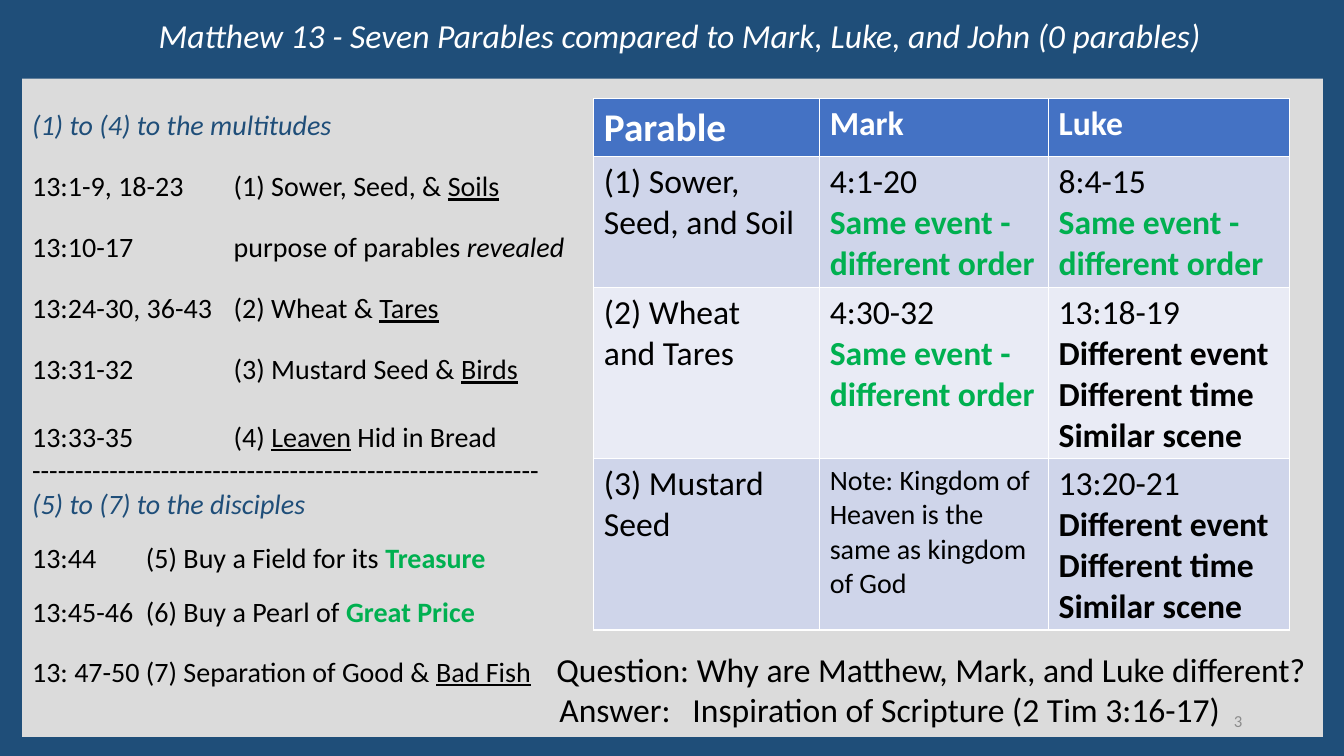
"""Build a slide that compares the parables of Matthew 13 with Mark and Luke."""
from lxml.etree import SubElement
from pptx import Presentation
from pptx.dml.color import RGBColor
from pptx.enum.shapes import MSO_SHAPE
from pptx.enum.text import MSO_ANCHOR, MSO_AUTO_SIZE, PP_ALIGN
from pptx.oxml.ns import qn
from pptx.util import Inches, Pt


class Theme:
    """Colours, type sizes and font of the slide."""

    font = "Calibri"
    navy, panel, head = "1F4E79", "DBDBDB", "4472C4"
    bands = ["CFD5EA", "E9EBF5"]
    white, black, green, grey = "FFFFFF", "000000", "00B050", "8C8C8C"
    tiny, body, large, first = 12, 20, 24, 28


def style(font, size, color, bold=False, italic=False):
    """Set every property of a font."""
    font.name, font.size = Theme.font, Pt(size)
    font.bold, font.italic = bold, italic
    font.color.rgb = RGBColor.from_string(color)


def paint(fill, color):
    """Give a fill one solid colour."""
    fill.solid()
    fill.fore_color.rgb = RGBColor.from_string(color)


deck = Presentation()
deck.slide_width, deck.slide_height = Inches(13.33), Inches(7.5)
slide = deck.slides.add_slide(deck.slide_layouts[5])
paint(slide.background.fill, Theme.navy)

title = slide.shapes.title
title.left, title.top = Inches(0.19), Inches(0.1)
title.width, title.height = Inches(13.1), Inches(0.5)
frame = title.text_frame
frame.auto_size = MSO_AUTO_SIZE.NONE
frame.vertical_anchor = MSO_ANCHOR.TOP
frame.text = "Matthew 13 - Seven Parables compared to Mark, Luke, and John (0 parables)"
frame.paragraphs[0].alignment = PP_ALIGN.CENTER
style(frame.paragraphs[0].font, Theme.large, Theme.white, italic=True)

panel = slide.shapes.add_shape(
    MSO_SHAPE.RECTANGLE, Inches(0.22), Inches(0.78), Inches(12.9), Inches(6.53))
panel.shadow.inherit = False
paint(panel.fill, Theme.panel)
panel.line.fill.background()
frame = panel.text_frame
frame.word_wrap = True
frame.vertical_anchor = MSO_ANCHOR.TOP
frame.margin_top = Inches(0.29)

wide, near, final = [2.0], [1.13], [1.13, 5.2]
verses = [
    (0, wide, [("(1) to (4) to the multitudes", "title")]),
    (19.5, wide, [("13:1-9, 18-23\t(1) Sower, Seed, & ", ""), ("Soils", "under")]),
    (19.5, wide, [("13:10-17\tpurpose of parables ", ""), ("revealed", "italic")]),
    (19.5, wide, [("13:24-30, 36-43\t(2) Wheat & ", ""), ("Tares", "under")]),
    (19.5, wide, [("13:31-32\t(3) Mustard Seed & ", ""), ("Birds", "under")]),
    (24.4, wide, [("13:33-35\t(4) ", ""), ("Leaven", "under"), (" Hid in Bread", "")]),
    (0, wide, [("-" * 59, "")]),
    (0, wide, [("(5) to (7) to the disciples", "title")]),
    (14.6, near, [("13:44\t(5) Buy a Field for its ", ""), ("Treasure", "green")]),
    (14.6, near, [("13:45-46\t(6) Buy a Pearl of ", ""), ("Great Price", "green")]),
    (14.6, final, [("13: 47-50\t(7) Separation of Good & ", ""), ("Bad Fish", "under"),
                   ("\tQuestion: Why are Matthew, Mark, and Luke different?", "large")]),
    (0, [5.23, 6.55], [("\tAnswer:\tInspiration of Scripture (2 Tim 3:16-17)", "large")]),
]
for row, (gap, stops, parts) in enumerate(verses):
    para = frame.paragraphs[0] if row == 0 else frame.add_paragraph()
    para.alignment = PP_ALIGN.LEFT
    para.space_before = Pt(gap)
    tabs = SubElement(para._p.get_or_add_pPr(), qn("a:tabLst"))
    for stop in stops:
        SubElement(tabs, qn("a:tab"), pos=str(Inches(stop)), algn="l")
    for text, look in parts:
        run = para.add_run()
        run.text = text
        color = {"title": Theme.navy, "green": Theme.green}.get(look, Theme.black)
        size = Theme.large if look == "large" else Theme.body
        style(run.font, size, color, look == "green", look in ("title", "italic"))
        run.font.underline = look == "under"

number = slide.shapes.add_textbox(Inches(9.42), Inches(6.95), Inches(3), Inches(0.4))
frame = number.text_frame
frame.word_wrap = True
frame.vertical_anchor = MSO_ANCHOR.MIDDLE
frame.text = "3"
frame.paragraphs[0].alignment = PP_ALIGN.RIGHT
style(frame.paragraphs[0].font, Theme.tiny, Theme.grey)

same = "Same event - different order"
other = "Different event\nDifferent time\nSimilar scene"
cells = [
    ["Parable", "Mark", "Luke"],
    ["(1) Sower, Seed, and Soil", f"4:1-20\n{same}", f"8:4-15\n{same}"],
    ["(2) Wheat\nand Tares", f"4:30-32\n{same}", f"13:18-19\n{other}"],
    ["(3) Mustard Seed", "Note: Kingdom of Heaven is the same as kingdom of God",
     f"13:20-21\n{other}"],
]
table = slide.shapes.add_table(
    4, 3, Inches(5.89), Inches(0.98), Inches(6.9), Inches(5.27)).table
for column, width in zip(table.columns, [2.24, 2.27, 2.39]):
    column.width = Inches(width)
for line, height in zip(table.rows, [0.57, 1.3, 1.7, 1.7]):
    line.height = Inches(height)
for row, texts in enumerate(cells):
    for col, text in enumerate(texts):
        cell = table.cell(row, col)
        paint(cell.fill, Theme.bands[(row - 1) % 2] if row else Theme.head)
        cell.text = text
        for rank, para in enumerate(cell.text_frame.paragraphs):
            size = Theme.large
            if text == "Parable":
                size = Theme.first
            elif text.startswith("Note"):
                size = Theme.body
            color = Theme.black if row else Theme.white
            if para.text == same:
                color = Theme.green
            style(para.font, size, color, row == 0 or (col > 0 and rank > 0))

deck.save("out.pptx")
